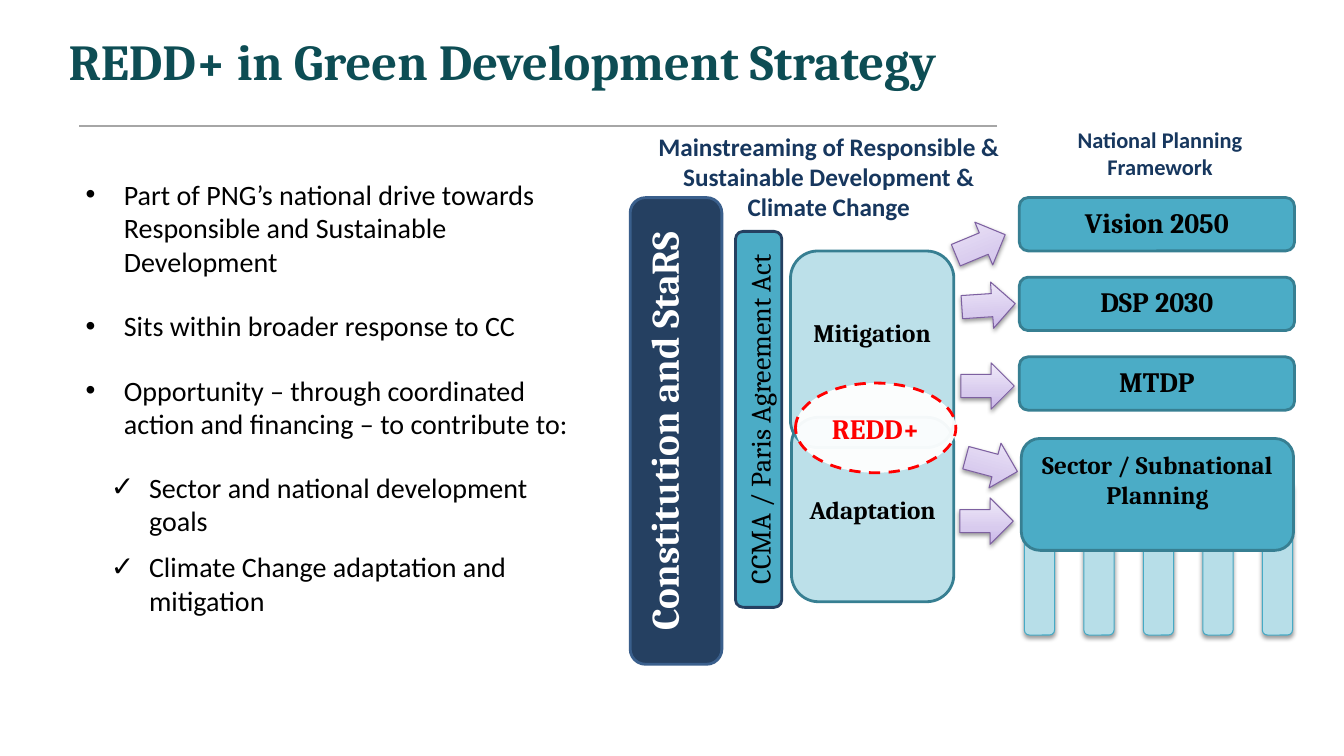
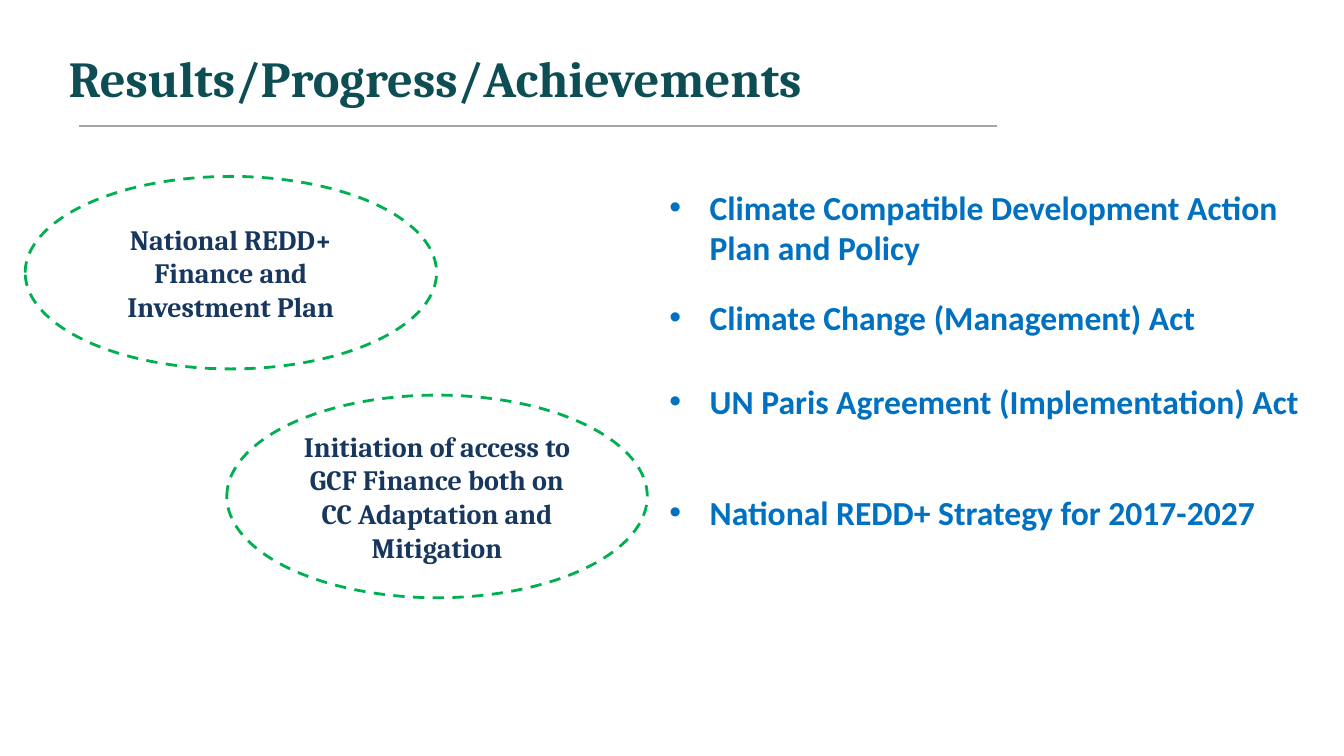
from lxml.etree import SubElement
from pptx import Presentation
from pptx.dml.color import RGBColor
from pptx.enum.dml import MSO_LINE
from pptx.enum.shapes import MSO_CONNECTOR, MSO_SHAPE
from pptx.enum.text import MSO_ANCHOR, MSO_AUTO_SIZE, PP_ALIGN
from pptx.oxml.ns import qn
from pptx.util import Emu, Pt

EMU_PER_PX = 9144  # 100 px to the inch
TITLE_ONLY = 5

HEADING_FONT = "Cambria"
BODY_FONT = "Calibri"

BLACK = RGBColor(0x00, 0x00, 0x00)
WHITE = RGBColor(0xFF, 0xFF, 0xFF)
TITLE_GREEN = RGBColor(0x0D, 0x4D, 0x54)
RULE_GRAY = RGBColor(0xA6, 0xA6, 0xA6)
NAVY = RGBColor(0x25, 0x40, 0x61)
NAVY_EDGE = RGBColor(0x3A, 0x5F, 0x8C)
NAVY_TEXT = RGBColor(0x17, 0x37, 0x5E)
TEAL = RGBColor(0x4B, 0xAC, 0xC6)
TEAL_EDGE = RGBColor(0x37, 0x7F, 0x92)
PALE_TEAL = RGBColor(0xB7, 0xDE, 0xE8)
PALE_TEAL_EDGE = RGBColor(0x46, 0xAA, 0xC5)
PURPLE_EDGE = RGBColor(0x7D, 0x60, 0xA0)
RED = RGBColor(0xFF, 0x00, 0x00)
GREEN = RGBColor(0x00, 0xB0, 0x50)
BLUE = RGBColor(0x00, 0x70, 0xC0)
ARROW_STOPS = [
    (0, RGBColor(0xC9, 0xB5, 0xE8)),
    (35, RGBColor(0xD8, 0xCB, 0xEE)),
    (100, RGBColor(0xF0, 0xEA, 0xF9)),
]


def px(value):
    return Emu(value * EMU_PER_PX)


def write_text(paragraph, text, *, size, color, font=HEADING_FONT, bold=True,
               align=PP_ALIGN.LEFT, bullet=None, margin=0, hang=0, before=0, after=0):
    if bullet:
        properties = paragraph._p.get_or_add_pPr()
        properties.set("marL", str(px(margin)))
        properties.set("indent", str(px(-hang)))
        SubElement(properties, qn("a:buFont")).set("typeface", "Arial")
        SubElement(properties, qn("a:buChar")).set("char", bullet)
    paragraph.alignment = align
    paragraph.space_before = Pt(before)
    paragraph.space_after = Pt(after)
    run = paragraph.add_run()
    run.text = text
    run.font.name = font
    run.font.size = Pt(size)
    run.font.bold = bold
    run.font.color.rgb = color


def prepare_frame(shape, anchor=MSO_ANCHOR.TOP):
    frame = shape.text_frame
    frame.word_wrap = True
    frame.auto_size = MSO_AUTO_SIZE.NONE
    frame.vertical_anchor = anchor
    return frame


def add_text_box(slide, left, top, width, height):
    return prepare_frame(slide.shapes.add_textbox(px(left), px(top), px(width), px(height)))


def add_panel(slide, kind, box, *, line, fill=None, line_width=2, opacity=100,
              rotation=0, anchor=MSO_ANCHOR.TOP):
    shape = slide.shapes.add_shape(kind, *map(px, box))
    shape.rotation = rotation
    shape.shadow.inherit = False
    shape.line.color.rgb = line
    shape.line.width = Pt(line_width)
    if fill is not None:
        shape.fill.solid()
        shape.fill.fore_color.rgb = fill
    if opacity < 100:
        color = shape.element.spPr.find(f"{qn('a:solidFill')}/{qn('a:srgbClr')}")
        SubElement(color, qn("a:alpha")).set("val", str(opacity * 1000))
    prepare_frame(shape, anchor)
    return shape


def add_drop_shadow(shape):
    effects = shape.element.spPr.find(qn("a:effectLst"))
    shadow = SubElement(effects, qn("a:outerShdw"), blurRad="40000", dist="20000",
                        dir="5400000", rotWithShape="0")
    color = SubElement(shadow, qn("a:srgbClr"), val=str(BLACK))
    SubElement(color, qn("a:alpha"), val="38000")


def fill_with_stops(shape, stops):
    """Fill with a gradient that runs from the bottom edge to the top."""
    shape.fill.gradient()
    shape.fill.gradient_angle = 90
    stop_list = shape.element.spPr.find(f"{qn('a:gradFill')}/{qn('a:gsLst')}")
    for old_stop in list(stop_list):
        stop_list.remove(old_stop)
    for position, color in stops:
        stop = SubElement(stop_list, qn("a:gs"), pos=str(position * 1000))
        SubElement(stop, qn("a:srgbClr"), val=str(color))


def add_dashed_ellipse(slide, box, text, line, color):
    ellipse = add_panel(slide, MSO_SHAPE.OVAL, box, fill=WHITE, opacity=95,
                        line=line, anchor=MSO_ANCHOR.MIDDLE)
    ellipse.line.dash_style = MSO_LINE.DASH
    write_text(ellipse.text_frame.paragraphs[0], text, size=20, color=color,
               align=PP_ALIGN.CENTER)


def add_titled_slide(presentation, title, top, width, height):
    slide = presentation.slides.add_slide(presentation.slide_layouts[TITLE_ONLY])
    rule = slide.shapes.add_connector(MSO_CONNECTOR.STRAIGHT, px(989), px(125), px(78), px(125))
    rule.line.color.rgb = RULE_GRAY
    rule.line.width = Pt(2)
    SubElement(rule._element.spPr, qn("a:effectLst"))

    placeholder = slide.shapes.title
    placeholder.left, placeholder.top = px(58), px(top)
    placeholder.width, placeholder.height = px(width), px(height)
    frame = prepare_frame(placeholder)
    write_text(frame.paragraphs[0], title, size=36, color=TITLE_GREEN)
    return slide


def add_contributions(slide, left, top, width, height):
    main = dict(bullet="•", margin=38, before=4, after=18)
    detail = dict(bullet="✓", margin=63, before=3, after=6)
    items = [
        ("Part of PNG’s national drive towards Responsible and Sustainable Development",
         {**main, "before": 0}),
        ("Sits within broader response to CC", main),
        ("Opportunity – through coordinated action and financing – to contribute to:", main),
        ("Sector and national development goals", detail),
        ("Climate Change adaptation and mitigation", detail),
    ]
    frame = add_text_box(slide, left, top, width, height)
    for index, (text, style) in enumerate(items):
        paragraph = frame.add_paragraph() if index else frame.paragraphs[0]
        write_text(paragraph, text, size=20, color=BLACK, font=BODY_FONT, bold=False,
                   hang=38, **style)


def add_legal_pillars(slide, left, top):
    """Draw two upright bars whose text reads from bottom to top."""
    pillars = [
        ("Constitution and StaRS", 0, 0, 91, 463, NAVY, NAVY_EDGE, 28, WHITE, True),
        ("CCMA / Paris Agreement Act", 104, 34, 46, 373, TEAL, NAVY, 20, BLACK, False),
    ]
    for text, x, y, width, height, fill, line, size, color, bold in pillars:
        shift = (height - width) // 2
        box = (left + x - shift, top + y + shift, height, width)
        pillar = add_panel(slide, MSO_SHAPE.ROUNDED_RECTANGLE, box, fill=fill, line=line,
                           rotation=270)
        write_text(pillar.text_frame.paragraphs[0], text, size=size, color=color,
                   bold=bold, align=PP_ALIGN.CENTER)


def add_climate_responses(slide, left, top):
    responses = [
        ("Mitigation", (left, top, 162, 195), 38),
        ("Adaptation", (left + 1, top + 165, 161, 183), 5),
    ]
    for text, box, bottom_inset in responses:
        panel = add_panel(slide, MSO_SHAPE.ROUNDED_RECTANGLE, box, fill=TEAL, opacity=37,
                          line=TEAL_EDGE, anchor=MSO_ANCHOR.MIDDLE)
        frame = panel.text_frame
        frame.margin_left = frame.margin_right = px(4)
        frame.margin_bottom = px(bottom_inset)
        write_text(frame.paragraphs[0], text, size=18, color=BLACK, align=PP_ALIGN.CENTER)
    add_dashed_ellipse(slide, (left + 5, top + 131, 159, 89), "REDD+", RED, RED)


def add_planning_framework(slide, left, top):
    for column in range(5):
        box = (left + 5 + 59 * column, top + 282, 30, 152)
        leg = add_panel(slide, MSO_SHAPE.ROUNDED_RECTANGLE, box, fill=PALE_TEAL,
                        line=PALE_TEAL_EDGE, line_width=0.75)
        add_drop_shadow(leg)

    plans = [
        (text, (left, top + 79 * row, 273, 53), 20)
        for row, text in enumerate(["Vision 2050", "DSP 2030", "MTDP"])
    ]
    plans.append(("Sector / Subnational Planning", (left + 2, top + 239, 270, 111), 18))
    for text, box, size in plans:
        plan = add_panel(slide, MSO_SHAPE.ROUNDED_RECTANGLE, box, fill=TEAL, line=TEAL_EDGE)
        write_text(plan.text_frame.paragraphs[0], text, size=size, color=BLACK,
                   align=PP_ALIGN.CENTER)


def add_plan_arrows(slide, left, top):
    arrows = [(0, 0, 337.4), (8, 60, 356.2), (7, 140, 0), (11, 218, 15), (6, 274, 0)]
    for x, y, rotation in arrows:
        arrow = add_panel(slide, MSO_SHAPE.RIGHT_ARROW, (left + x, top + y, 53, 46),
                          line=PURPLE_EDGE, line_width=0.75, rotation=rotation)
        fill_with_stops(arrow, ARROW_STOPS)
        add_drop_shadow(arrow)


def add_diagram_heading(slide, box, text, size):
    frame = add_text_box(slide, *box)
    write_text(frame.paragraphs[0], text, size=size, color=NAVY_TEXT, font=BODY_FONT,
               align=PP_ALIGN.CENTER)


def add_policy_list(slide, left, top, width):
    policies = [
        ("Climate Compatible Development Action Plan and Policy", 0, 91),
        ("Climate Change (Management) Act", 110, 50),
        ("UN Paris Agreement (Implementation) Act", 193, 50),
        ("National REDD+ Strategy for 2017-2027", 303, 50),
    ]
    for text, offset, height in policies:
        frame = add_text_box(slide, left, top + offset, width, height)
        write_text(frame.paragraphs[0], text, size=24, color=BLUE, font=BODY_FONT,
                   bullet="•", margin=79, hang=40)


def build_strategy_slide(presentation):
    slide = add_titled_slide(presentation, "REDD+ in Green Development Strategy", 25, 1088, 87)
    add_contributions(slide, 75, 171, 508, 429)
    add_legal_pillars(slide, 625, 196)
    add_climate_responses(slide, 784, 249)
    add_planning_framework(slide, 1011, 196)
    add_plan_arrows(slide, 946, 220)
    add_diagram_heading(
        slide, (627, 125, 390, 101),
        "Mainstreaming of Responsible & Sustainable Development & Climate Change", 18)
    add_diagram_heading(slide, (1044, 120, 213, 64), "National Planning Framework", 16)


def build_results_slide(presentation):
    slide = add_titled_slide(presentation, "Results/Progress/Achievements", 42, 967, 76)
    add_policy_list(slide, 615, 180, 694)
    add_dashed_ellipse(slide, (25, 175, 408, 191),
                       "National REDD+ Finance and Investment Plan", GREEN, NAVY_TEXT)
    add_dashed_ellipse(
        slide, (225, 392, 417, 201),
        "Initiation of access to GCF Finance both on CC Adaptation and Mitigation",
        GREEN, NAVY_TEXT)


def main():
    presentation = Presentation()
    presentation.slide_width = px(1333)
    presentation.slide_height = px(750)
    build_strategy_slide(presentation)
    build_results_slide(presentation)
    presentation.save("out.pptx")


if __name__ == "__main__":
    main()
